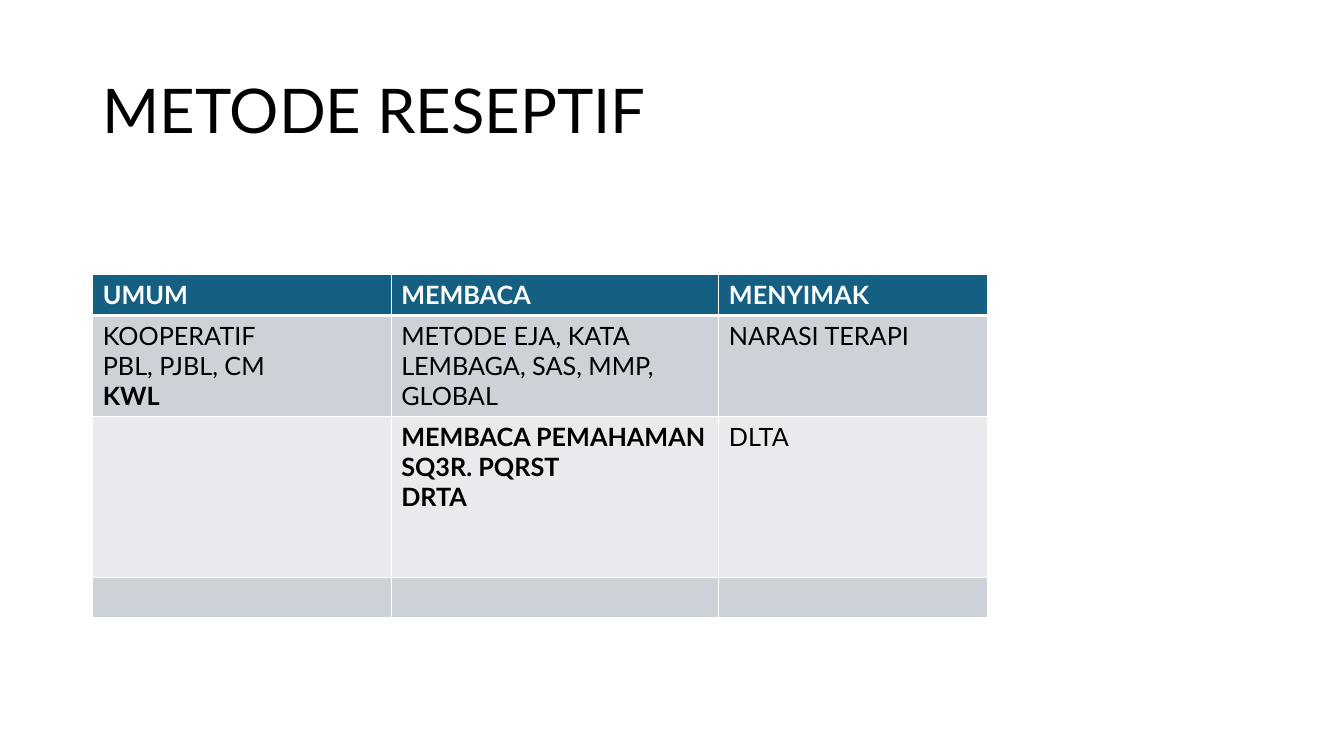
import pptx
import pptx.util
import pptx.dml.color
import pptx.enum.text
import lxml.etree

Inches = pptx.util.Inches
Pt = pptx.util.Pt

COL_WIDTHS = [2.96, 3.25, 2.67]
ROW_HEIGHTS = [0.41, 1.0, 1.6, 0.4]
ROW_FILLS = ["156082", "CCD2D8", "E8EAED", "CCD2D8"]
CELLS = [
    ["UMUM", "MEMBACA", "MENYIMAK"],
    ["KOOPERATIF\nPBL, PJBL, CM\nKWL", "METODE EJA, KATA LEMBAGA, SAS, MMP, GLOBAL", "NARASI TERAPI"],
    ["", "MEMBACA PEMAHAMAN\nSQ3R. PQRST\nDRTA", "DLTA"],
    ["", "", ""],
]
BOLD_LINES = {"KWL", "MEMBACA PEMAHAMAN", "SQ3R. PQRST", "DRTA"}


def rgb(color):
    return pptx.dml.color.RGBColor.from_string(color)


def write(tf, text, size=18, color="000000", bold=False, bold_lines=(), spacing=1.0):
    for i, line in enumerate(text.split("\n")):
        p = tf.paragraphs[0] if i == 0 else tf.add_paragraph()
        p.line_spacing = spacing
        p.font.size = Pt(size)
        if line:
            r = p.add_run()
            r.text = line
            r.font.name = "Lato"
            r.font.size = Pt(size)
            r.font.bold = bold or line in bold_lines
            r.font.color.rgb = rgb(color)


def add_title(s, text):
    sp = s.shapes.add_textbox(Inches(0.92), Inches(0.4), Inches(11.5), Inches(1.45))
    tf = sp.text_frame
    tf.word_wrap = True
    tf.vertical_anchor = pptx.enum.text.MSO_ANCHOR.MIDDLE
    write(tf, text, size=44, spacing=0.9)


def set_borders(cell, color, bottom):
    tcPr = cell._tc.get_or_add_tcPr()
    ns = pptx.oxml.ns.qn
    widths = {"lnL": 1, "lnR": 1, "lnT": 1, "lnB": bottom}
    for i, (side, width) in enumerate(widths.items()):
        ln = lxml.etree.Element(ns("a:" + side), w=str(Pt(width)))
        fill = lxml.etree.SubElement(ln, ns("a:solidFill"))
        lxml.etree.SubElement(fill, ns("a:srgbClr"), val=color)
        tcPr.insert(i, ln)


def add_methods_table(s):
    sp = s.shapes.add_table(len(CELLS), len(COL_WIDTHS), Inches(0.92), Inches(2.72),
                            Inches(sum(COL_WIDTHS)), Inches(sum(ROW_HEIGHTS)))
    table = sp.table
    for col, width in zip(table.columns, COL_WIDTHS):
        col.width = Inches(width)
    for i, texts in enumerate(CELLS):
        table.rows[i].height = Inches(ROW_HEIGHTS[i])
        header = i == 0
        for j, text in enumerate(texts):
            cell = table.cell(i, j)
            cell.fill.solid()
            cell.fill.fore_color.rgb = rgb(ROW_FILLS[i])
            set_borders(cell, "FFFFFF", bottom=3 if header else 1)
            write(cell.text_frame, text, color="FFFFFF" if header else "000000",
                  bold=header, bold_lines=BOLD_LINES)


def main():
    prs = pptx.Presentation()
    prs.slide_width = Inches(13.33)
    prs.slide_height = Inches(7.5)
    s = prs.slides.add_slide(prs.slide_layouts[6])
    add_title(s, "METODE RESEPTIF")
    add_methods_table(s)
    prs.save("out.pptx")


if __name__ == "__main__":
    main()
